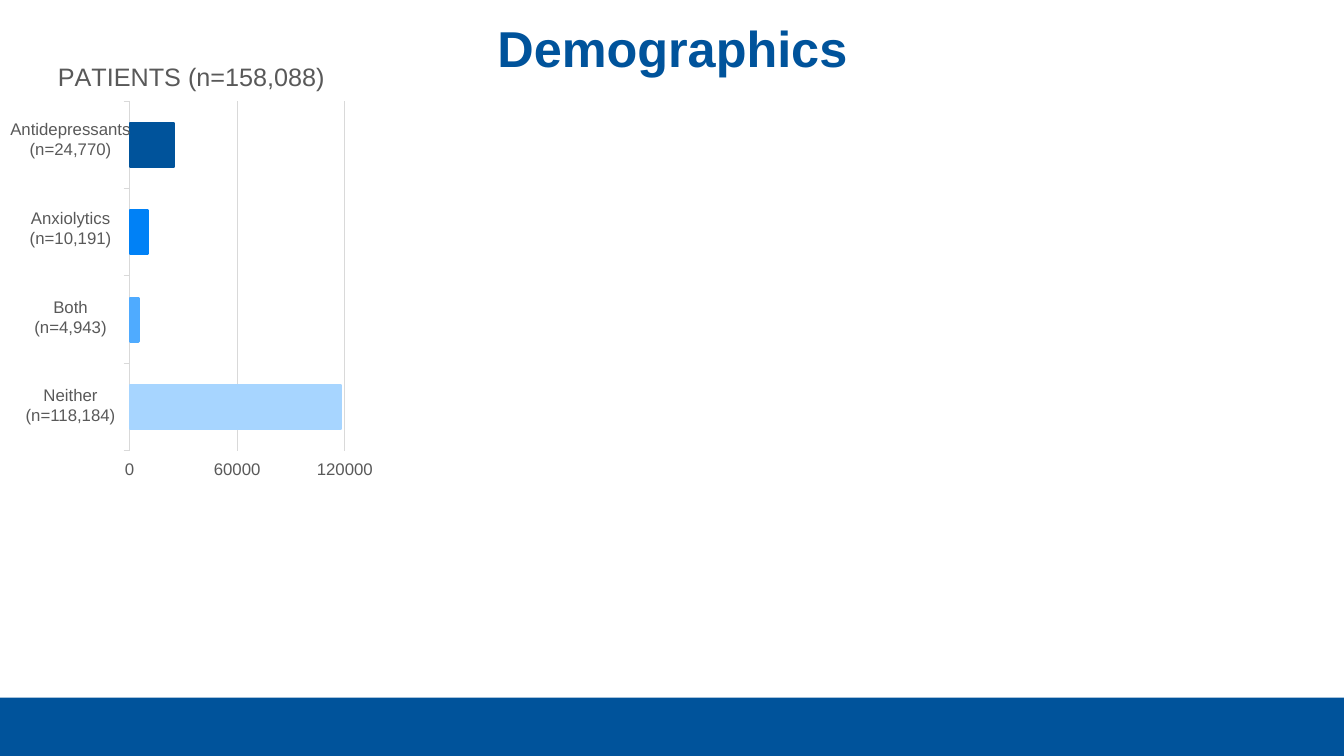
from dataclasses import dataclass

from lxml import etree
from pptx import Presentation
from pptx.chart.data import CategoryChartData
from pptx.dml.color import RGBColor as RGB
from pptx.enum.chart import (XL_CHART_TYPE as Kind, XL_TICK_LABEL_POSITION as Place,
                             XL_TICK_MARK as Tick)
from pptx.enum.shapes import MSO_SHAPE as Shape
from pptx.enum.text import MSO_ANCHOR as Anchor, MSO_AUTO_SIZE as Fit, PP_ALIGN as Align
from pptx.oxml.ns import qn
from pptx.util import Inches, Pt


@dataclass(frozen=True)
class Theme:
    font: str = "Arial"
    navy: str = "00539B"
    gray: str = "595959"
    grid: str = "D9D9D9"
    head: int = 36
    title: int = 18
    label: int = 12


THEME = Theme()

# Group, count line, label width, bar value, bar colour; top to bottom
GROUPS = [
    ("Antidepressants", "(n=24,770)", 1.4, 25000, THEME.navy),
    ("Anxiolytics", "(n=10,191)", 1.02, 10000, "0081F6"),
    ("Both", "(n=4,943)", 0.92, 5000, "4FABFF"),
    ("Neither", "(n=118,184)", 1.1, 118000, "A7D5FF"),
]
MID, TOP, STEP = 0.7, 1.13, 0.88


def style(font, size, color, bold=False):
    font.name = THEME.font
    font.size = Pt(size)
    font.bold = bold
    font.color.rgb = RGB.from_string(color)


def stroke(line, color, width):
    line.color.rgb = RGB.from_string(color)
    line.width = Pt(width)


def place(box, left, top, width, height):
    box.left, box.top = Inches(left), Inches(top)
    box.width, box.height = Inches(width), Inches(height)


def add_band(slide):
    band = slide.shapes.add_shape(Shape.RECTANGLE, Inches(0), Inches(6.92),
                                  Inches(13.33), Inches(0.58))
    band.shadow.inherit = False
    band.fill.solid()
    band.fill.fore_color.rgb = RGB.from_string(THEME.navy)
    band.line.fill.background()


def set_title(slide, text):
    title = slide.shapes.title
    place(title, 0.56, -0.16, 12.22, 1.25)
    frame = title.text_frame
    frame.text = text
    frame.vertical_anchor = Anchor.MIDDLE
    para = frame.paragraphs[0]
    para.alignment = Align.CENTER
    style(para.runs[0].font, THEME.head, THEME.navy, True)


def set_layout(node, after, **parts):
    """Give a chart part a fixed place, as fractions of the chart."""
    for old in node.findall(qn("c:layout")):
        node.remove(old)
    layout = etree.Element(qn("c:layout"))
    manual = etree.SubElement(layout, qn("c:manualLayout"))
    for name, value in parts.items():
        etree.SubElement(manual, qn("c:" + name)).set("val", str(value))
    if after is None:
        node.insert(0, layout)
    else:
        after.addnext(layout)


def style_axes(chart):
    cat, val = chart.category_axis, chart.value_axis
    for axis in (cat, val):
        axis.major_tick_mark = Tick.OUTSIDE
        axis.minor_tick_mark = Tick.NONE
        style(axis.tick_labels.font, THEME.label, THEME.gray)
    cat.tick_label_position = Place.NONE
    stroke(cat.format.line, THEME.grid, 0.75)
    val.minimum_scale, val.maximum_scale, val.major_unit = 0, 120000, 60000
    val.format.line.fill.background()
    val.has_major_gridlines = True
    stroke(val.major_gridlines.format.line, THEME.grid, 0.75)


def add_bars(slide, title):
    rows = GROUPS[::-1]
    data = CategoryChartData()
    data.categories = [row[0] for row in rows]
    data.add_series("Series 1", [row[3] for row in rows])
    chart = slide.shapes.add_chart(Kind.BAR_CLUSTERED, Inches(0), Inches(0.38),
                                   Inches(3.78), Inches(4.45), data).chart
    chart.has_legend = False
    style(chart.font, 10, "000000")

    # Chart title and plot area
    chart.has_title = True
    frame = chart.chart_title.text_frame
    frame.text = title
    style(frame.paragraphs[0].runs[0].font, THEME.title, THEME.gray)
    head = chart.chart_title._element
    set_layout(head, head.find(qn("c:tx")), xMode="edge", yMode="edge", x=0.14, y=0.04)
    plot = chart._chartSpace.chart.plotArea
    set_layout(plot, None, layoutTarget="inner", xMode="edge", yMode="edge",
               x=0.34, y=0.14, w=0.565, h=0.78)
    style_axes(chart)

    # Bars
    bars = chart.plots[0]
    bars.gap_width = 100
    bars.vary_by_categories = False
    for i, row in enumerate(rows):
        look = bars.series[0].points[i].format
        look.fill.solid()
        look.fill.fore_color.rgb = RGB.from_string(row[4])
        stroke(look.line, row[4], 1.5)


def add_label(slide, lines, top, width):
    box = slide.shapes.add_textbox(Inches(MID - width / 2), Inches(top),
                                   Inches(width), Inches(0.5))
    frame = box.text_frame
    frame.word_wrap = False
    frame.auto_size = Fit.SHAPE_TO_FIT_TEXT
    frame.text = "\n".join(lines)
    for para in frame.paragraphs:
        para.alignment = Align.CENTER
        style(para.runs[0].font, THEME.label, THEME.gray)


def main():
    deck = Presentation()
    deck.slide_width, deck.slide_height = Inches(13.33), Inches(7.5)
    slide = deck.slides.add_slide(deck.slide_layouts[5])
    add_band(slide)
    set_title(slide, "Demographics")
    add_bars(slide, "PATIENTS (n=158,088)")
    for i, (name, count, width, _, _) in enumerate(GROUPS):
        add_label(slide, (name, count), TOP + i * STEP, width)
    deck.save("out.pptx")


if __name__ == "__main__":
    main()
